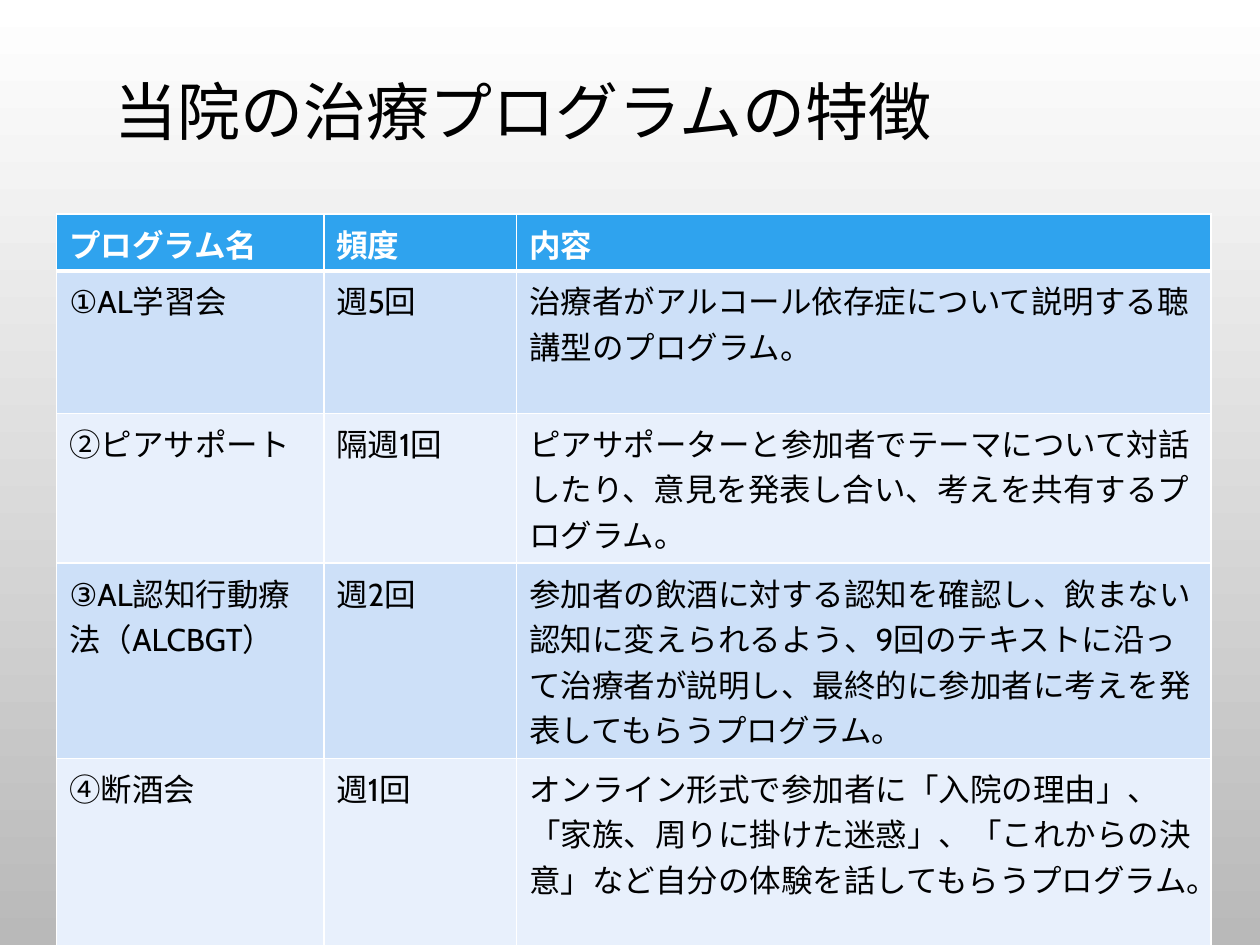
from lxml import etree
from pptx import Presentation, util as u
from pptx.dml.color import RGBColor
from pptx.enum import text
from pptx.oxml import ns

THEME = {
    "font": "Cabin", "title": 36, "body": 18,
    "ink": "000000", "white": "FFFFFF", "grey": "B9B9B9",
    "header": "2FA3EE", "bands": ("CDE0F8", "E8F0FC"),
}
COLS = (2.12, 1.53, 5.51)
ROWS = (0.45, 1.13, 1.19, 1.55, 1.52)
PROGRAMS = [
    ("プログラム名", "頻度", "内容"),
    ("①AL学習会", "週5回", "治療者がアルコール依存症について説明する聴講型のプログラム。"),
    ("②ピアサポート", "隔週1回",
     "ピアサポーターと参加者でテーマについて対話したり、意見を発表し合い、考えを共有するプログラム。"),
    ("③AL認知行動療法（ALCBGT）", "週2回",
     "参加者の飲酒に対する認知を確認し、飲まない認知に変えられるよう、9回のテキストに沿って"
     "治療者が説明し、最終的に参加者に考えを発表してもらうプログラム。"),
    ("④断酒会", "週1回",
     "オンライン形式で参加者に「入院の理由」、「家族、周りに掛けた迷惑」、「これからの決意」など"
     "自分の体験を話してもらうプログラム。"),
]


def write(p, words, size, color, bold=False):
    r = p.add_run()
    r.text = words
    for name, value in {"name": THEME["font"], "size": u.Pt(size), "bold": bold}.items():
        setattr(r.font, name, value)
    r.font.color.rgb = RGBColor.from_string(color)


def border(cell, bottom):
    """Draw white cell edges; the bottom one has its own width in points."""
    props = cell._tc.get_or_add_tcPr()
    for i, (side, width) in enumerate({"L": 1, "R": 1, "T": 1, "B": bottom}.items()):
        ln = etree.Element(ns.qn(f"a:ln{side}"), w=str(u.Pt(width)))
        fill = etree.SubElement(ln, ns.qn("a:solidFill"))
        etree.SubElement(fill, ns.qn("a:srgbClr"), val=THEME["white"])
        props.insert(i, ln)


prs = Presentation()
prs.slide_width, prs.slide_height = u.Inches(10), u.Inches(7.5)
W, H = prs.slide_width, prs.slide_height
s = prs.slides.add_slide(prs.slide_layouts[6])

bg = s.background.fill
bg.gradient()
bg.gradient_angle = 270
for stop, color in zip(bg.gradient_stops, (THEME["white"], THEME["grey"])):
    stop.color.rgb = RGBColor.from_string(color)

title = s.shapes.add_textbox(int(W * 0.068), int(H / 15), int(W * 0.694), int(H * 0.11))
tf = title.text_frame
tf.word_wrap = True
tf.vertical_anchor = text.MSO_ANCHOR.MIDDLE
p = tf.paragraphs[0]
p.alignment = text.PP_ALIGN.CENTER
p.line_spacing = 0.9
write(p, "当院の治療プログラムの特徴", THEME["title"], THEME["ink"])

table = s.shapes.add_table(len(ROWS), len(COLS), u.Inches(0.45), u.Inches(1.7),
                           u.Inches(sum(COLS)), u.Inches(sum(ROWS))).table
for col, width in zip(table.columns, COLS):
    col.width = u.Inches(width)
for i, (row, height, words) in enumerate(zip(table.rows, ROWS, PROGRAMS)):
    row.height = u.Inches(height)
    head = i == 0
    fill = THEME["header"] if head else THEME["bands"][(i - 1) % 2]
    for cell, word in zip(row.cells, words):
        cell.fill.solid()
        cell.fill.fore_color.rgb = RGBColor.from_string(fill)
        border(cell, 3 if head else 1)
        write(cell.text_frame.paragraphs[0], word, THEME["body"],
              THEME["white" if head else "ink"], head)

prs.save("out.pptx")
